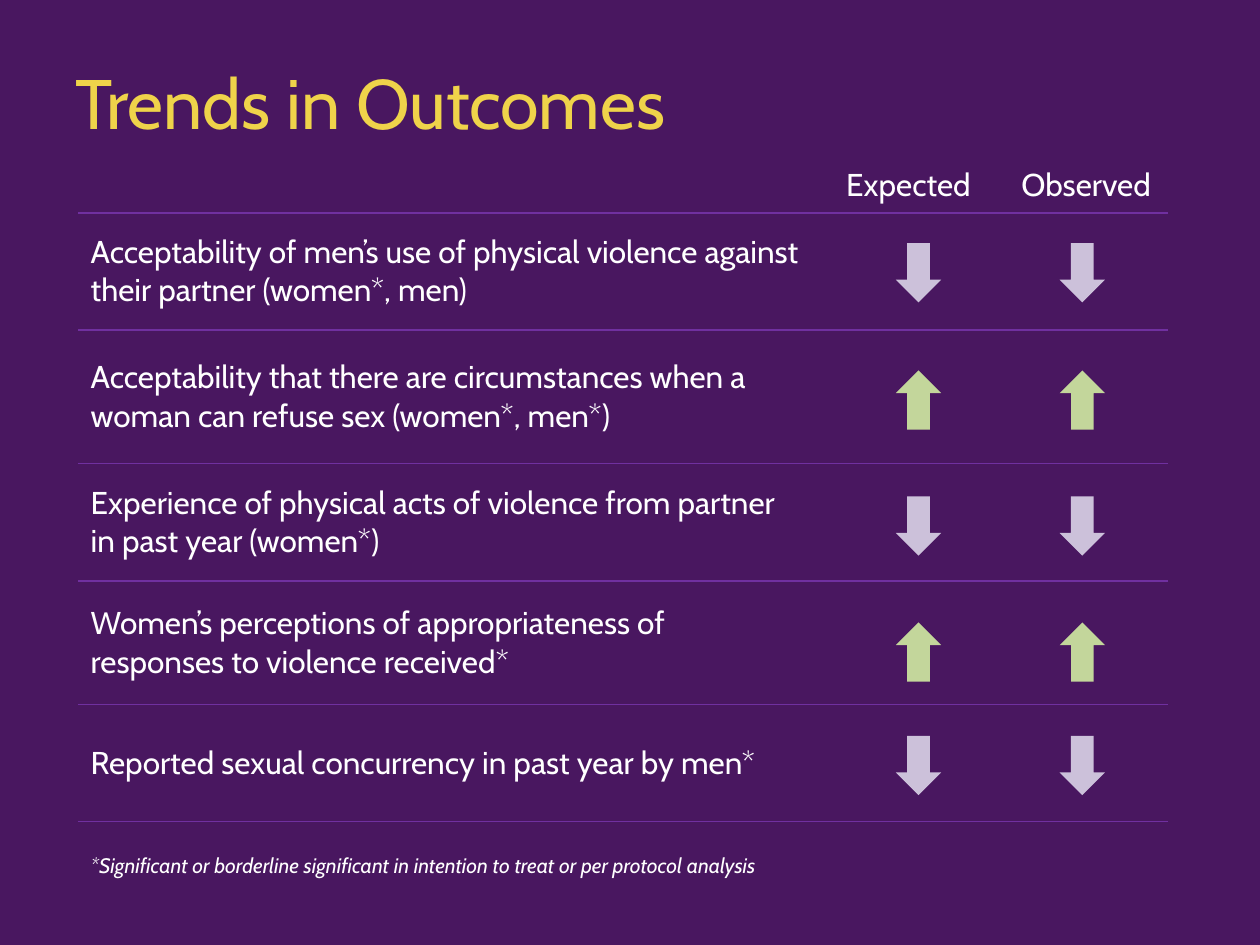
import pptx
import pptx.dml.color
import pptx.enum.shapes
import pptx.enum.text
import pptx.oxml
import pptx.oxml.ns
import pptx.util
from lxml import etree

RGBColor = pptx.dml.color.RGBColor
Inches = pptx.util.Inches
Pt = pptx.util.Pt
ALIGN = pptx.enum.text.PP_ALIGN
ANCHOR = pptx.enum.text.MSO_ANCHOR

PURPLE = RGBColor(0x49, 0x17, 0x60)
RULE = RGBColor(0x70, 0x30, 0xA0)
YELLOW = RGBColor(0xEF, 0xD3, 0x4A)
WHITE = RGBColor(0xFF, 0xFF, 0xFF)
LILAC = RGBColor(0xCC, 0xC1, 0xDA)
GREEN = RGBColor(0xC3, 0xD6, 0x9B)

TABLE_LEFT, TABLE_TOP = 0.62, 1.27
COLUMNS = [5.83, 1.52, 1.3]
HEADER_HEIGHT, NOTE_HEIGHT = 0.42, 0.5
HEADINGS = ["Expected", "Observed"]
ARROW_LEFTS = [7.11, 8.41]
ARROW_WIDTH, ARROW_HEIGHT = 0.36, 0.47

# Outcome, row height, arrow top, whether the trend rises
OUTCOMES = [
    ("Acceptability of men’s use of physical violence against their partner "
     "(women*, men)", 0.93, 1.93, False),
    ("Acceptability that there are circumstances when a woman can refuse sex "
     "(women*, men*)", 1.06, 2.94, True),
    ("Experience of physical acts of violence from partner in past year "
     "(women*)", 0.93, 3.94, False),
    ("Women’s perceptions of appropriateness of responses to violence "
     "received*", 0.98, 4.94, True),
    ("Reported sexual concurrency in past year by men*", 0.93, 5.84, False),
]
NOTE = ("*Significant or borderline significant in intention to treat "
        "or per protocol analysis")


def write(frame, text, size, color=WHITE, align=ALIGN.LEFT, italic=False):
    para = frame.paragraphs[0]
    para.alignment = align
    span = para.add_run()
    span.text = text
    span.font.color.rgb = color
    for name, value in {"name": "Cabin", "size": Pt(size), "italic": italic}.items():
        setattr(span.font, name, value)


def set_borders(cell, ruled_sides):
    """Draw a rule on the given sides and clear the others."""
    properties = cell._tc.get_or_add_tcPr()
    for side in "LRTB":
        line = etree.SubElement(properties, pptx.oxml.ns.qn("a:ln" + side),
                                w=str(Pt(1)))
        if side in ruled_sides:
            fill = etree.SubElement(line, pptx.oxml.ns.qn("a:solidFill"))
            etree.SubElement(fill, pptx.oxml.ns.qn("a:srgbClr"), val=str(RULE))
        else:
            etree.SubElement(line, pptx.oxml.ns.qn("a:noFill"))


def add_title(page):
    box = page.shapes.add_textbox(Inches(0.5), Inches(0.42),
                                  Inches(8.17), Inches(0.77))
    box.text_frame.word_wrap = True
    write(box.text_frame, "Trends in Outcomes", 40, YELLOW)


def add_outcome_table(page):
    heights = [HEADER_HEIGHT, *(row[1] for row in OUTCOMES), NOTE_HEIGHT]
    table = page.shapes.add_table(
        len(heights), len(COLUMNS), Inches(TABLE_LEFT), Inches(TABLE_TOP),
        Inches(sum(COLUMNS)), Inches(sum(heights))).table
    for name in ("first_row", "horz_banding"):
        setattr(table, name, False)
    for column, width in zip(table.columns, COLUMNS):
        column.width = Inches(width)

    # Rules run between rows only
    last = len(heights) - 1
    for index, height in enumerate(heights):
        table.rows[index].height = Inches(height)
        sides = ("T" if index > 0 else "") + ("B" if index < last else "")
        for cell in table.rows[index].cells:
            set_borders(cell, sides)
            cell.fill.background()

    # Headings, outcomes and footnote
    for column, heading in enumerate(HEADINGS, 1):
        write(table.cell(0, column).text_frame, heading, 18, align=ALIGN.CENTER)
    for index, outcome in enumerate(OUTCOMES, 1):
        cell = table.cell(index, 0)
        cell.vertical_anchor = ANCHOR.MIDDLE
        write(cell.text_frame, outcome[0], 18)
    note = table.cell(last, 0)
    note.merge(table.cell(last, len(COLUMNS) - 1))
    note.margin_top = Inches(0.25)
    note.margin_bottom = 0
    write(note.text_frame, NOTE, 12, italic=True)


def add_arrow(page, left, top, rising):
    arrow = page.shapes.add_shape(
        pptx.enum.shapes.MSO_SHAPE.DOWN_ARROW, Inches(left), Inches(top),
        Inches(ARROW_WIDTH), Inches(ARROW_HEIGHT))
    arrow.shadow.inherit = False
    arrow.rotation = 180 if rising else 0
    arrow.fill.solid()
    arrow.fill.fore_color.rgb = GREEN if rising else LILAC
    arrow.line.fill.background()


def main():
    deck = pptx.Presentation()
    deck.slide_width, deck.slide_height = Inches(10), Inches(7.5)
    page = deck.slides.add_slide(deck.slide_layouts[6])
    page.background.fill.solid()
    page.background.fill.fore_color.rgb = PURPLE

    add_outcome_table(page)
    add_title(page)
    for left in ARROW_LEFTS:
        for _, _, top, rising in OUTCOMES:
            add_arrow(page, left, top, rising)
    deck.save("out.pptx")


if __name__ == "__main__":
    main()
